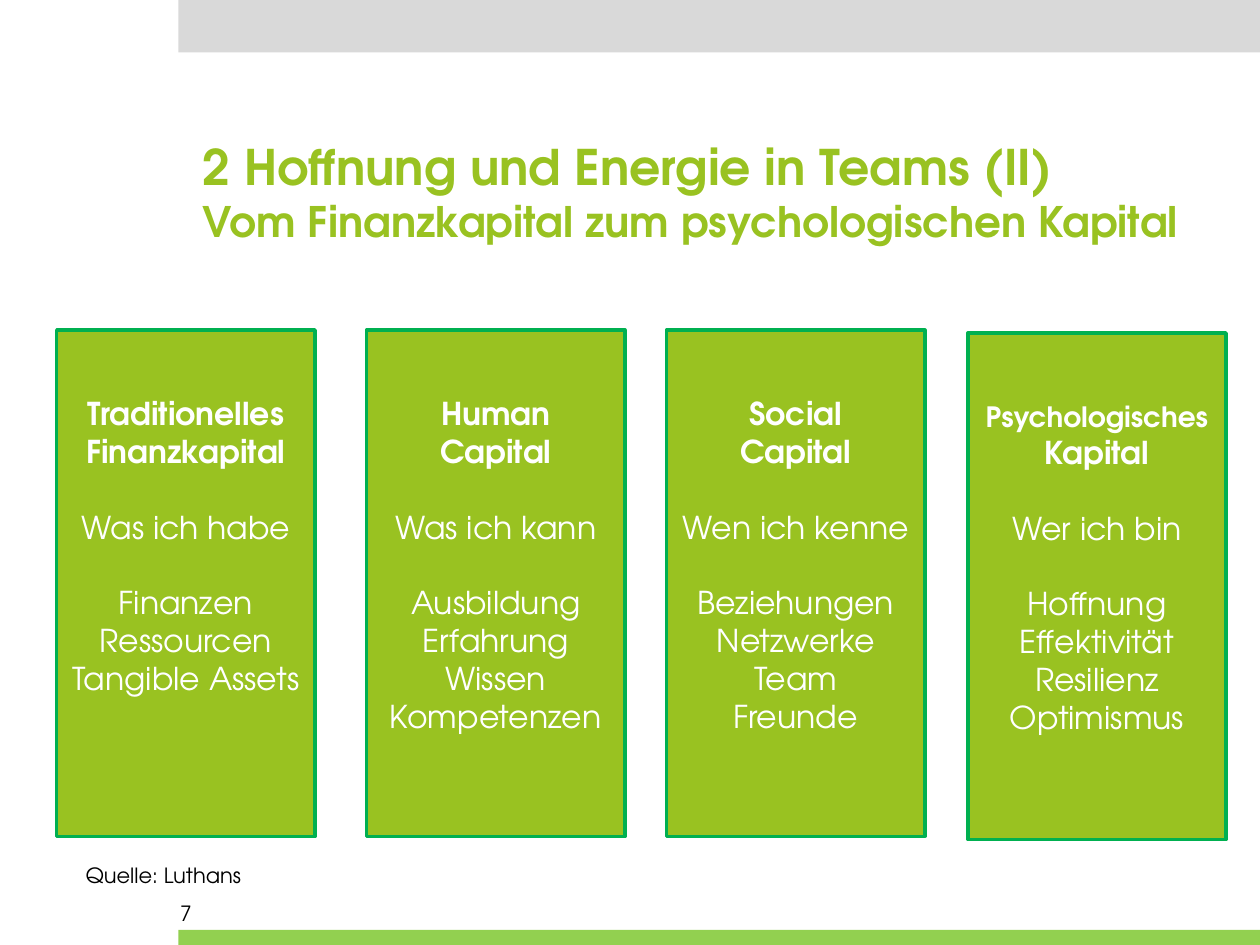
from dataclasses import dataclass

from pptx import Presentation
from pptx.dml.color import RGBColor
from pptx.enum.shapes import MSO_SHAPE
from pptx.enum.text import MSO_ANCHOR, MSO_AUTO_SIZE, PP_ALIGN
from pptx.util import Pt

RECT = MSO_SHAPE.RECTANGLE
TOP = MSO_ANCHOR.TOP
FIXED = MSO_AUTO_SIZE.NONE
LEFT, CENTER = PP_ALIGN.LEFT, PP_ALIGN.CENTER

FONT = "TeX Gyre Adventor"
COLORS = {"lime": "99C221", "edge": "00B050", "gray": "D9D9D9",
          "foot": "92D050", "white": "FFFFFF", "black": "000000"}

# Card measures, in points
WIDTH, HEIGHT = 147.6, 289.4
BODY = 18
PITCH = 1.2  # line height per point of type
ROWS = 10  # height of the text block in lines, gaps included


@dataclass
class Line:
    text: str
    size: float = BODY
    bold: bool = False
    gap: float = 0


@dataclass
class Card:
    left: float
    top: float
    head: tuple[str, str]
    claim: str
    items: list[str]
    size: float = BODY  # size of the first heading line


CARDS = [
    Card(32.4, 188.6, ("Traditionelles", "Finanzkapital"), "Was ich habe",
         ["Finanzen", "Ressourcen", "Tangible Assets"]),
    Card(209.5, 188.6, ("Human", "Capital"), "Was ich kann",
         ["Ausbildung", "Erfahrung", "Wissen", "Kompetenzen"]),
    Card(380.9, 188.6, ("Social", "Capital"), "Wen ich kenne",
         ["Beziehungen", "Netzwerke", "Team", "Freunde"]),
    Card(553, 190.3, ("Psychologisches", "Kapital"), "Wer ich bin",
         ["Hoffnung", "Effektivität", "Resilienz", "Optimismus"], 16),
]


def rgb(name: str) -> RGBColor:
    return RGBColor.from_string(COLORS[name])


def apply(target, values: dict) -> None:
    for name, value in values.items():
        setattr(target, name, value)


def write(frame, lines: list[Line], color: str, align=LEFT) -> None:
    for i, line in enumerate(lines):
        para = frame.paragraphs[0] if i == 0 else frame.add_paragraph()
        apply(para, {"alignment": align, "space_before": Pt(line.gap)})
        run = para.add_run()
        run.text = line.text
        apply(run.font, {"name": FONT, "size": Pt(line.size), "bold": line.bold})
        run.font.color.rgb = rgb(color)


def draw_box(slide, left: float, top: float, width: float, height: float,
             fill: str, edge: str | None = None):
    box = slide.shapes.add_shape(RECT, Pt(left), Pt(top), Pt(width), Pt(height))
    box.shadow.inherit = False
    box.fill.solid()
    box.fill.fore_color.rgb = rgb(fill)
    if edge:
        box.line.color.rgb = rgb(edge)
        box.line.width = Pt(2)
    else:
        box.line.fill.background()
    return box


def draw_card(slide, card: Card) -> None:
    gap = BODY * PITCH
    first, second = card.head
    lines = [Line(first, card.size, True), Line(second, bold=True),
             Line(card.claim, gap=gap)]
    lines += [Line(item, gap=0 if i else gap) for i, item in enumerate(card.items)]
    inset = (HEIGHT - (ROWS - 1) * gap - card.size * PITCH) / 2
    box = draw_box(slide, card.left, card.top, WIDTH, HEIGHT, "lime", "edge")
    apply(box.text_frame, {"vertical_anchor": TOP, "word_wrap": True,
                           "margin_top": Pt(inset)})
    write(box.text_frame, lines, "white", CENTER)


def draw_note(slide, left: float, top: float, width: float, height: float,
              text: str, wrap: bool) -> None:
    note = slide.shapes.add_textbox(Pt(left), Pt(top), Pt(width), Pt(height))
    note.text_frame.word_wrap = wrap
    write(note.text_frame, [Line(text, 12)], "black")


def main() -> None:
    deck = Presentation()
    apply(deck, {"slide_width": Pt(720), "slide_height": Pt(540)})
    slide = deck.slides.add_slide(deck.slide_layouts[5])

    # Bars at head and foot
    draw_box(slide, 102, 0, 618, 30, "gray")
    draw_box(slide, 102, 531.4, 618, 8.6, "foot")

    # Title
    title = slide.shapes.title
    apply(title, {"left": Pt(116), "top": Pt(77.8),
                  "width": Pt(578), "height": Pt(59.8)})
    apply(title.text_frame, {"margin_left": 0, "margin_right": 0,
                             "margin_top": 0, "margin_bottom": 0,
                             "vertical_anchor": TOP, "word_wrap": True,
                             "auto_size": FIXED})
    write(title.text_frame,
          [Line("2 Hoffnung und Energie in Teams (II)", 28, True),
           Line("Vom Finanzkapital zum psychologischen Kapital", 24, True)],
          "lime")

    # Four kinds of capital
    for card in CARDS:
        draw_card(slide, card)

    # Page number and source
    draw_note(slide, 95.8, 511.2, 168, 28.8, "7", True)
    draw_note(slide, 41.8, 489.6, 104.4, 21.6, "Quelle: Luthans", False)

    deck.save("out.pptx")


if __name__ == "__main__":
    main()
